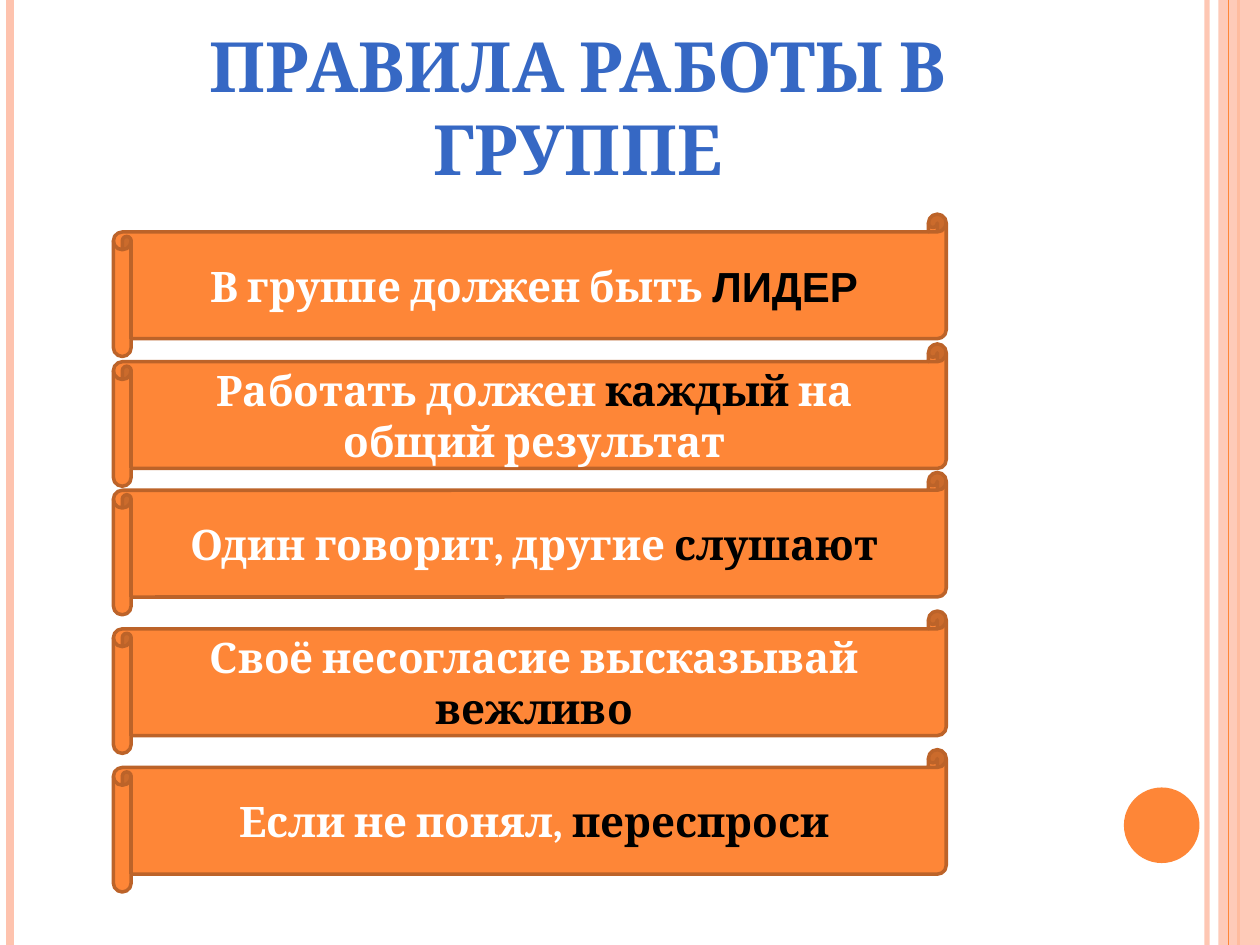
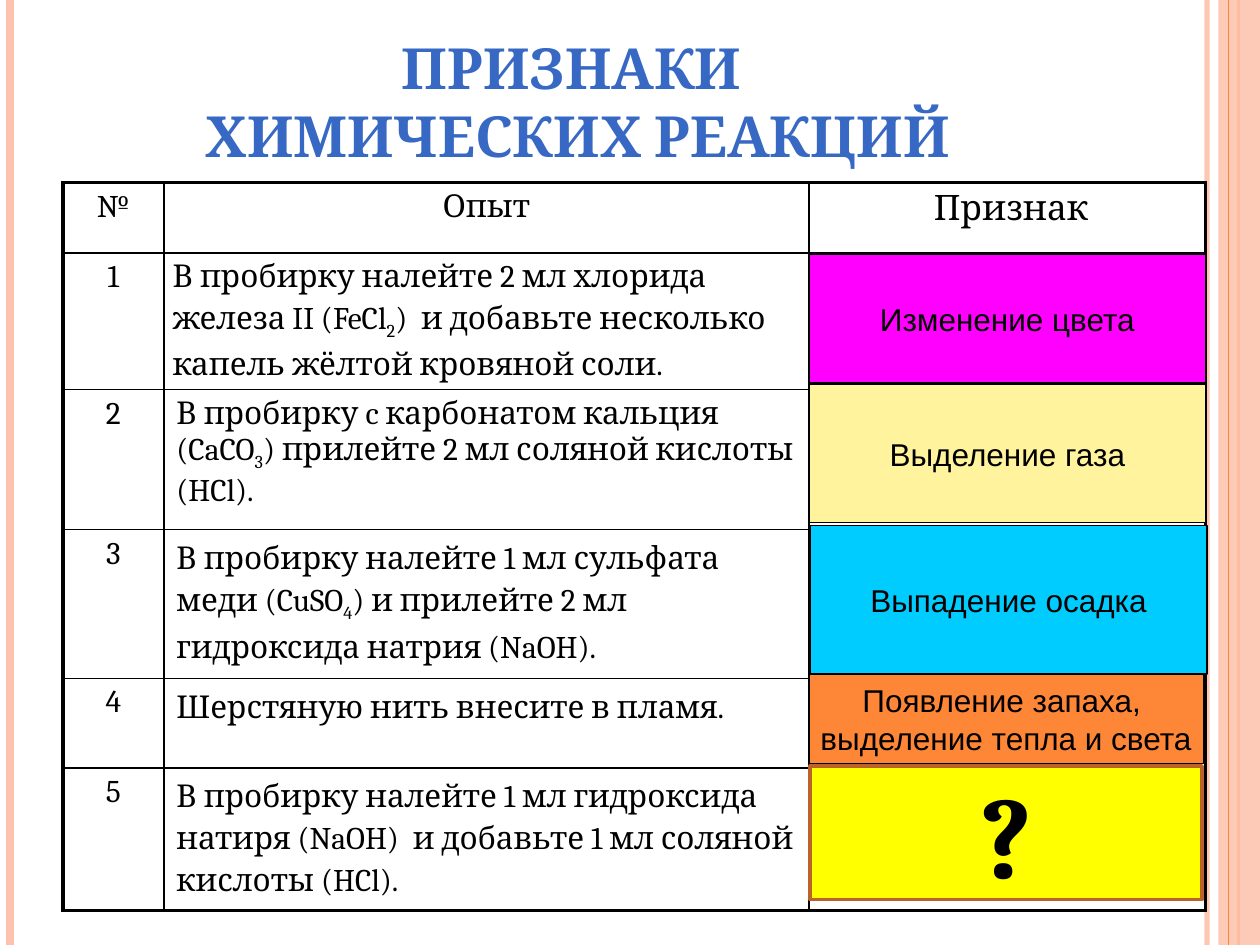
"""Build two lesson slides: group work rules and signs of chemical reactions."""
import itertools

import lxml.etree
import pptx
import pptx.dml.color
import pptx.enum.shapes
import pptx.enum.text
import pptx.oxml.ns
import pptx.util

Inches = pptx.util.Inches
Pt = pptx.util.Pt
MSO_SHAPE = pptx.enum.shapes.MSO_SHAPE
ALIGN = pptx.enum.text.PP_ALIGN
ANCHOR = pptx.enum.text.MSO_ANCHOR
qn = pptx.oxml.ns.qn

COLORS = {
    "orange": "FE8637", "peach": "FEC3AE", "brown": "BC6329", "title": "3668C4",
    "black": "000000", "white": "FFFFFF", "magenta": "FF00FF", "cream": "FFF39D",
    "cyan": "00CCFF", "yellow": "FFFF00",
}
TITLE = {"name": "Cambria", "bold": True, "color": "title"}
RULE = {"name": "Cambria", "size": Pt(24), "bold": True, "color": "white"}
KEYWORD = {"color": "black"}
CELL = {"name": "Cambria", "size": Pt(18), "color": "black"}
LABEL = {"name": "Arial", "size": Pt(18), "color": "black"}
QUESTION = {"name": "Cambria", "size": Pt(66), "bold": True, "color": "black"}
SUBSCRIPT = {"baseline": "-25000"}
CENTERED = {"alignment": ALIGN.CENTER}
SPACED = {"line_spacing": 1.15, "space_after": Pt(10)}

STRIPES = [
    (9.58, "peach", 3, 93), (0.08, "peach", 4.5, 100),
    (9.83, "orange", 1.5, 100), (9.75, "orange", 0.75, 100),
]
RULE_TOPS = [1.7, 2.73, 3.75, 4.85, 5.95]
RULES = [
    [("В группе должен быть ", {}), ("ЛИДЕР", {**KEYWORD, "name": "Arial"})],
    [("Работать должен ", {}), ("каждый", KEYWORD), (" на общий результат", {})],
    [("Один говорит, другие ", {}), ("слушают", KEYWORD)],
    [("Своё несогласие высказывай ", {}), ("вежливо", KEYWORD)],
    [("Если не понял, ", {}), ("переспроси", KEYWORD)],
]
COLUMN_WIDTHS = [0.8, 5.12, 3.15]
ROW_HEIGHTS = [0.56, 1.05, 1.11, 1.18, 0.71, 1.09]
EXPERIMENTS = [
    [("В пробирку налейте 2 мл хлорида железа II (FeCl", {}), ("2", SUBSCRIPT),
     (")  и добавьте несколько капель жёлтой кровяной соли.", {})],
    [("В пробирку c карбонатом кальция (CaCO", {}), ("3", SUBSCRIPT),
     (") прилейте 2 мл соляной кислоты (HCl).", {})],
    [("В пробирку налейте 1 мл сульфата меди (CuSO", {}), ("4", SUBSCRIPT),
     (") и прилейте 2 мл гидроксида натрия (NaOH).", {})],
    [("Шерстяную нить внесите в пламя.", {})],
    [("В пробирку налейте 1 мл гидроксида натиря (NaOH)  и добавьте 1 мл соляной кислоты (HCl).", {})],
]
SIGNS = [
    ((6.42, 2.02, 3.15, 1.02), "magenta", ["Изменение цвета"]),
    ((6.42, 3.05, 3.15, 1.1), "cream", ["Выделение газа"]),
    ((6.43, 4.17, 3.15, 1.18), "cyan", ["Выпадение осадка"]),
    ((6.42, 5.35, 3.13, 0.71), "orange", ["Появление запаха, ", "выделение тепла и света"]),
]


def rgb(color):
    """Return the named palette colour."""
    return pptx.dml.color.RGBColor.from_string(COLORS[color])


def apply_format(target, values):
    """Set every attribute listed in a dict of format values."""
    for name, value in values.items():
        setattr(target, name, value)


def set_opacity(element, percent):
    """Make the first colour of an element partly transparent."""
    if percent < 100:
        color = element.find(".//" + qn("a:srgbClr"))
        lxml.etree.SubElement(color, qn("a:alpha")).set("val", str(percent * 1000))


def add_run(paragraph, text, style):
    """Add a run with font values, a palette colour and an optional baseline."""
    run = paragraph.add_run()
    run.text = text
    values = dict(style)
    run.font.color.rgb = rgb(values.pop("color"))
    baseline = values.pop("baseline", None)
    if baseline:
        run._r.get_or_add_rPr().set("baseline", baseline)
    apply_format(run.font, values)


def write_paragraphs(text_frame, paragraphs, style, layout=CENTERED):
    """Write paragraphs given as lists of (text, style changes) runs."""
    for index, runs in enumerate(paragraphs):
        paragraph = text_frame.add_paragraph() if index else text_frame.paragraphs[0]
        apply_format(paragraph, layout)
        for text, changes in runs:
            add_run(paragraph, text, {**style, **changes})


def add_box(slide, kind, place, fill, line=None, width=0.75):
    """Add a flat preset shape."""
    shape = slide.shapes.add_shape(kind, *map(Inches, place))
    shape.shadow.inherit = False
    shape.fill.solid()
    shape.fill.fore_color.rgb = rgb(fill)
    if line:
        shape.line.color.rgb = rgb(line)
        shape.line.width = Pt(width)
    else:
        shape.line.fill.background()
    return shape


def add_text_box(slide, kind, place, fill, line, width, paragraphs, style, wrap=True):
    """Add a preset shape with centred text."""
    shape = add_box(slide, kind, place, fill, line, width)
    apply_format(shape.text_frame, {"word_wrap": wrap, "vertical_anchor": ANCHOR.MIDDLE})
    write_paragraphs(shape.text_frame, paragraphs, style)


def add_stripe(slide, left, color, width, opacity):
    """Add a vertical line over the full slide height."""
    line = slide.shapes.add_connector(
        pptx.enum.shapes.MSO_CONNECTOR.STRAIGHT, Inches(left), 0, Inches(left), Inches(7.5))
    line.line.color.rgb = rgb(color)
    line.line.width = Pt(width)
    properties = line._element.spPr
    set_opacity(properties, opacity)
    lxml.etree.SubElement(properties, qn("a:effectLst"))


def add_title(slide, lines, size, height):
    """Add the bottom-anchored title, one line break between its lines."""
    box = slide.shapes.add_textbox(Inches(0.5), Inches(0.3), Inches(8.17), Inches(height))
    apply_format(box.text_frame, {"word_wrap": True, "vertical_anchor": ANCHOR.BOTTOM})
    paragraph = box.text_frame.paragraphs[0]
    apply_format(paragraph, CENTERED)
    for index, text in enumerate(lines):
        if index:
            paragraph.add_line_break()
        add_run(paragraph, text, {**TITLE, "size": Pt(size)})


def add_slide(presentation, title_lines, title_size, title_height):
    """Add a blank slide with the shared stripes, band and title."""
    slide = presentation.slides.add_slide(presentation.slide_layouts[6])
    for stripe in STRIPES[:3]:
        add_stripe(slide, *stripe)
    band = add_box(slide, MSO_SHAPE.RECTANGLE, (9.67, 0, 0.33, 7.5), "peach")
    set_opacity(band._element.spPr, 87)
    add_stripe(slide, *STRIPES[3])
    add_title(slide, title_lines, title_size, title_height)
    return slide


def set_borders(cell, widths):
    """Draw black cell borders, widths in points by side."""
    properties = cell._tc.get_or_add_tcPr()
    for side in "LRTB":
        line = lxml.etree.SubElement(properties, qn("a:ln" + side), w=str(Pt(widths[side])))
        fill = lxml.etree.SubElement(line, qn("a:solidFill"))
        lxml.etree.SubElement(fill, qn("a:srgbClr"), val=COLORS["black"])


def add_experiment_table(slide):
    """Add the table of experiments with a thick outer frame."""
    rows, columns = len(ROW_HEIGHTS), len(COLUMN_WIDTHS)
    table = slide.shapes.add_table(
        rows, columns, Inches(0.5), Inches(1.45),
        Inches(sum(COLUMN_WIDTHS)), Inches(sum(ROW_HEIGHTS))).table
    apply_format(table, {"first_row": False, "horz_banding": False})
    for column, width in zip(table.columns, COLUMN_WIDTHS):
        column.width = Inches(width)
    for row, height in zip(table.rows, ROW_HEIGHTS):
        row.height = Inches(height)
    for row, column in itertools.product(range(rows), range(columns)):
        cell = table.cell(row, column)
        outer = {"L": column == 0, "R": column == columns - 1, "T": row == 0, "B": row == rows - 1}
        set_borders(cell, {side: 2.25 if edge else 1 for side, edge in outer.items()})
        cell.fill.background()
    for column, text in enumerate(["№", "Опыт"]):
        write_paragraphs(table.cell(0, column).text_frame, [[(text, {})]], CELL)
    write_paragraphs(table.cell(0, 2).text_frame, [[(" Признак", {"size": Pt(20)})]], CELL,
                     {**CENTERED, "space_before": Pt(6)})
    for number, runs in enumerate(EXPERIMENTS, 1):
        write_paragraphs(table.cell(number, 0).text_frame, [[(str(number), {})]], CELL)
        write_paragraphs(table.cell(number, 1).text_frame, [runs], CELL, {} if number == 2 else SPACED)
    apply_format(table.cell(1, 1), {"margin_left": Inches(0.07), "margin_right": Inches(0.07),
                                    "margin_top": 0, "margin_bottom": 0})


def build_rules_slide(presentation):
    """Build the slide with the rules of group work."""
    slide = add_slide(presentation, ["ПРАВИЛА РАБОТЫ В ГРУППЕ"], 39.6, 1.25)
    add_box(slide, MSO_SHAPE.OVAL, (8.92, 6.25, 0.6, 0.6), "orange")
    for top, runs in zip(RULE_TOPS, RULES):
        add_text_box(slide, MSO_SHAPE.HORIZONTAL_SCROLL, (0.9, top, 6.61, 1.13),
                     "orange", "brown", 2, [runs], RULE)


def build_signs_slide(presentation):
    """Build the slide with the signs of chemical reactions."""
    slide = add_slide(presentation, ["ПРИЗНАКИ ", "ХИМИЧЕСКИХ РЕАКЦИЙ"], 32.4, 1.09)
    add_experiment_table(slide)
    for place, fill, lines in SIGNS:
        add_text_box(slide, MSO_SHAPE.RECTANGLE, place, fill, "black", 0.75,
                     [[(line, {})] for line in lines], LABEL, wrap=False)
    add_text_box(slide, MSO_SHAPE.RECTANGLE, (6.43, 6.08, 3.11, 1.06), "yellow", "brown", 2,
                 [[("?", {})]], QUESTION)


def main():
    """Build and save the presentation."""
    presentation = pptx.Presentation()
    apply_format(presentation, {"slide_width": Inches(10), "slide_height": Inches(7.5)})
    build_rules_slide(presentation)
    build_signs_slide(presentation)
    presentation.save("out.pptx")


if __name__ == "__main__":
    main()
